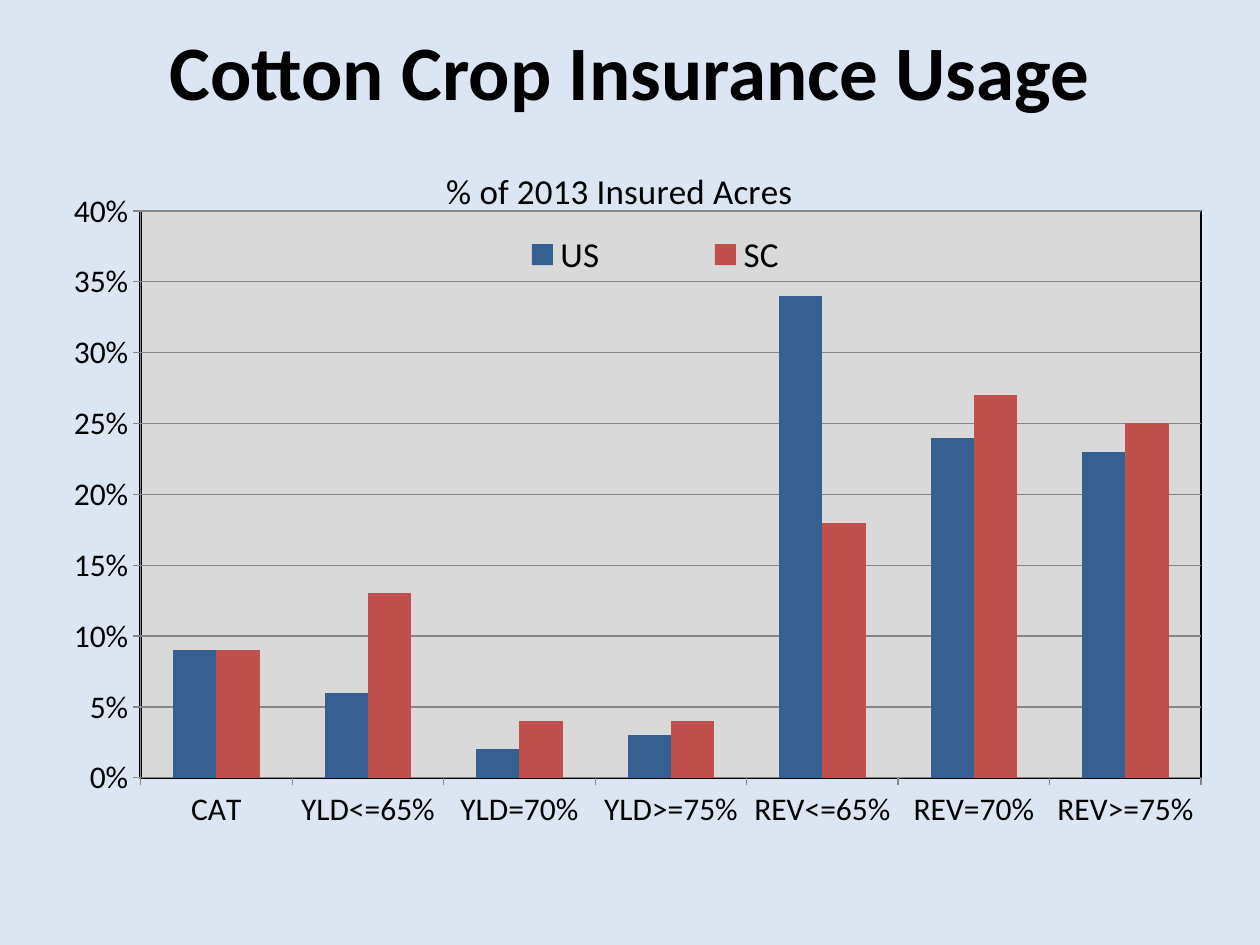
from lxml import etree
from pptx import Presentation
from pptx import util as u
from pptx.chart.data import CategoryChartData
from pptx.dml.color import RGBColor
from pptx.enum import chart as charts, text
from pptx.oxml import ns

EMU_PER_PX = 914400 / 126


def color(target, value):
    target.rgb = RGBColor.from_string(value)


def place(parent, index, **settings):
    for old in parent.findall(ns.qn("c:layout")):
        parent.remove(old)
    layout = etree.Element(ns.qn("c:layout"))
    manual = etree.SubElement(layout, ns.qn("c:manualLayout"))
    for name, value in settings.items():
        etree.SubElement(manual, ns.qn(f"c:{name}")).set("val", str(value))
    parent.insert(index, layout)


deck = Presentation()
deck.slide_width, deck.slide_height = u.Inches(10), u.Inches(7.5)
page = deck.slides.add_slide(deck.slide_layouts[5])
page.background.fill.solid()
color(page.background.fill.fore_color, "DCE6F2")

heading = page.shapes.title
heading.left, heading.top, heading.width, heading.height = [
    u.Emu(round(px * EMU_PER_PX)) for px in (21, 10, 1218, 120)]
heading.text_frame.text = "Cotton Crop Insurance Usage"
heading.text_frame.vertical_anchor = text.MSO_ANCHOR.MIDDLE
para = heading.text_frame.paragraphs[0]
para.alignment = text.PP_ALIGN.CENTER
span = para.runs[0]
span.font.name, span.font.size, span.font.bold = "Calibri", u.Pt(44), True
color(span.font.color, "000000")

data = CategoryChartData(number_format="0%")
data.categories = ["CAT", "YLD<=65%", "YLD=70%", "YLD>=75%",
                   "REV<=65%", "REV=70%", "REV>=75%"]
data.add_series("US", [0.09, 0.06, 0.02, 0.03, 0.34, 0.24, 0.23])
data.add_series("SC", [0.09, 0.13, 0.04, 0.04, 0.18, 0.27, 0.25])
frame = [u.Emu(round(px * EMU_PER_PX)) for px in (21, 130, 1197, 756)]
chart = page.shapes.add_chart(
    charts.XL_CHART_TYPE.COLUMN_CLUSTERED, *frame, data).chart
chart.font.name, chart.font.size = "Calibri", u.Pt(18)
color(chart.font.color, "000000")

plot = chart.plots[0]
plot.gap_width, plot.overlap, plot.vary_by_categories = 150, 0, False
for series, fill in zip(plot.series, ("376092", "C0504D")):
    series.format.fill.solid()
    color(series.format.fill.fore_color, fill)

for axis in (chart.category_axis, chart.value_axis):
    axis.major_tick_mark = charts.XL_TICK_MARK.OUTSIDE
    axis.minor_tick_mark = charts.XL_TICK_MARK.NONE
    axis.tick_labels.font.size = u.Pt(18)
    color(axis.format.line.color, "868686")
scale = chart.value_axis
scale.minimum_scale, scale.maximum_scale, scale.major_unit = 0, 0.4, 0.05
scale.tick_labels.number_format = "0%"
scale.tick_labels.number_format_is_linked = False
scale.has_major_gridlines = True
color(scale.major_gridlines.format.line.color, "868686")

chart.has_title = True
caption = chart.chart_title.text_frame
caption.text = "% of 2013 Insured Acres"
span = caption.paragraphs[0].runs[0]
span.font.name, span.font.size, span.font.bold = "Calibri", u.Pt(20), False
color(span.font.color, "000000")
title = chart.element.find(".//" + ns.qn("c:title"))
title.find(ns.qn("c:overlay")).set("val", "1")
place(title, 1, xMode="edge", yMode="edge", x=0.35, y=0.04)

chart.has_legend = True
legend = chart.legend
legend.position = charts.XL_LEGEND_POSITION.RIGHT
legend.include_in_layout = False
legend.font.name, legend.font.size = "Calibri", u.Pt(20)
color(legend.font.color, "000000")
place(chart.element.find(".//" + ns.qn("c:legend")), 1, xMode="edge",
      yMode="edge", x=0.34, y=0.13, w=0.38, h=0.07)

area = chart.element.find(".//" + ns.qn("c:plotArea"))
place(area, 0, layoutTarget="inner", xMode="edge", yMode="edge",
      x=0.1, y=0.107, w=0.886, h=0.75)
look = etree.SubElement(area, ns.qn("c:spPr"))
for parent, value in ((look, "D9D9D9"),
                      (etree.SubElement(look, ns.qn("a:ln"), w="19050"), "000000")):
    fill = etree.Element(ns.qn("a:solidFill"))
    etree.SubElement(fill, ns.qn("a:srgbClr"), val=value)
    parent.insert(0, fill)

deck.save("out.pptx")
